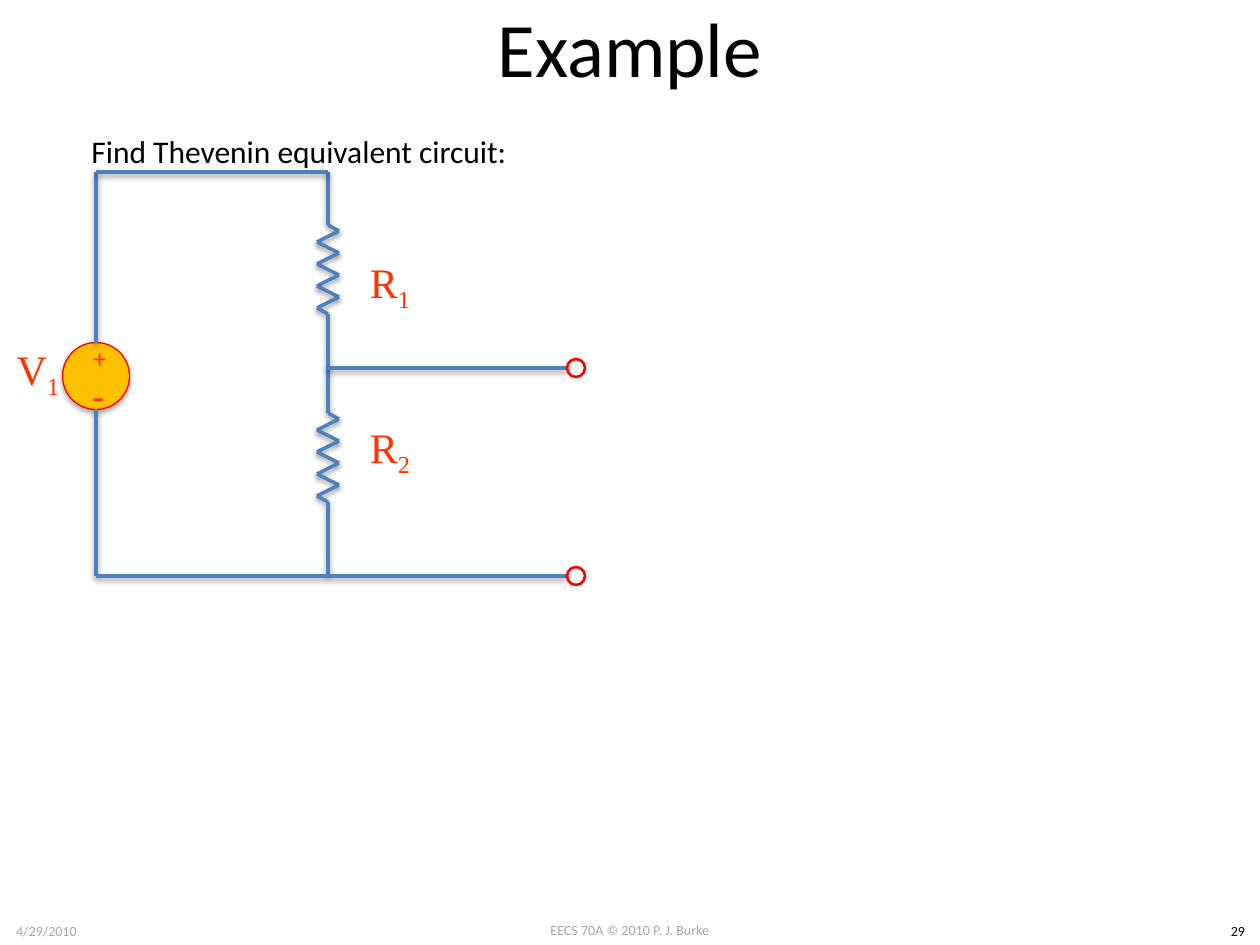
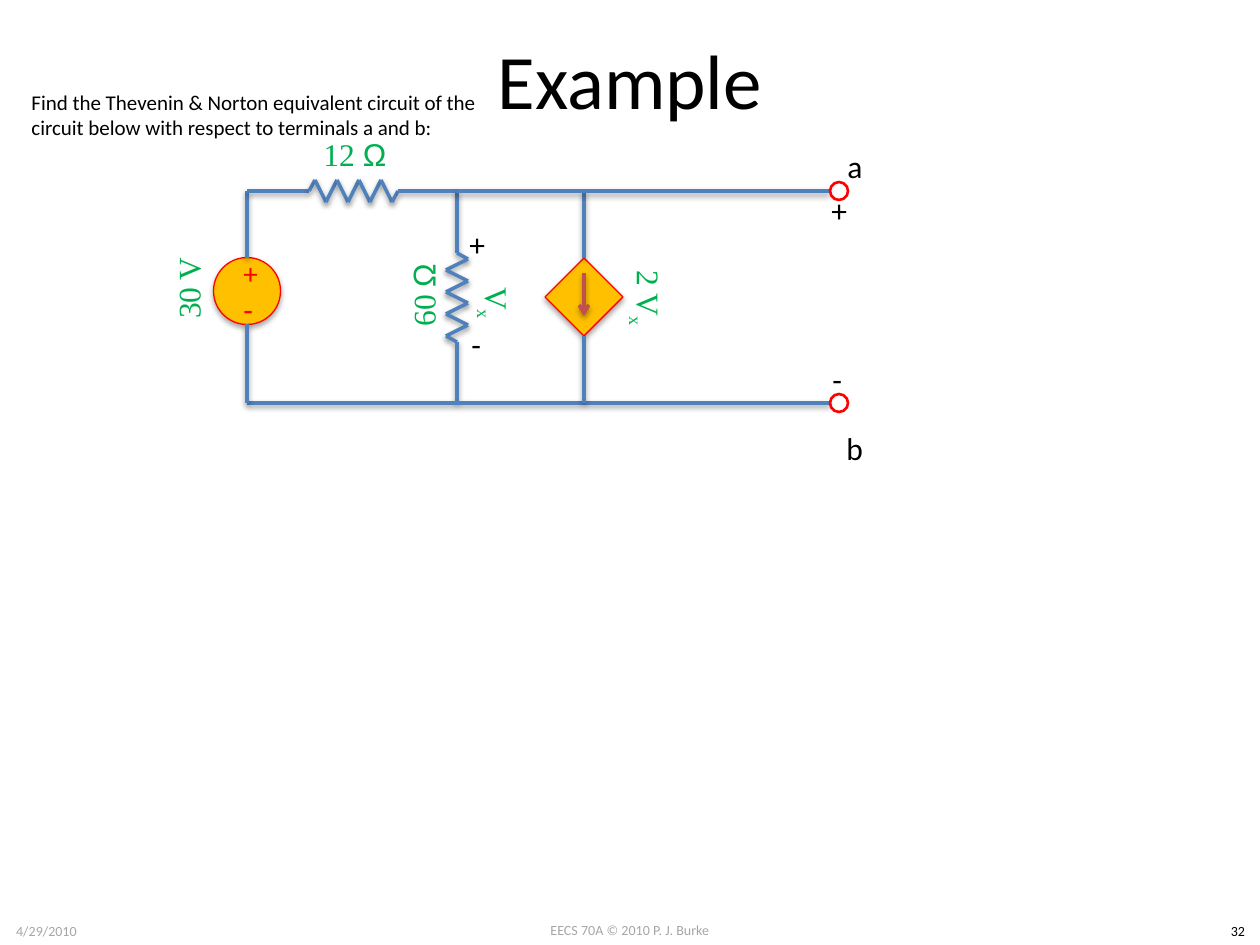
from dataclasses import dataclass
from itertools import pairwise

from pptx import Presentation
from pptx.dml.color import RGBColor
from pptx.enum.shapes import MSO_CONNECTOR as Link, MSO_SHAPE as Shape
from pptx.enum.text import MSO_ANCHOR as Anchor, MSO_AUTO_SIZE as Fit, PP_ALIGN as Align
from pptx.oxml import parse_xml
from pptx.oxml.ns import nsdecls
from pptx.util import Pt

PX = 914400 / 126


@dataclass(frozen=True)
class Theme:
    ink: str = "000000"
    muted: str = "A6A6A6"
    wire: str = "4F81BD"
    arrow: str = "C0504D"
    source: str = "FFC000"
    outline: str = "FF0000"
    symbol: str = "FF3300"
    value: str = "00B050"
    sans: str = "Calibri"
    serif: str = "Times New Roman"
    greek: str = "Arial"
    title_size: float = 44
    symbol_size: float = 24
    body_size: float = 18
    small_size: float = 12
    footer_size: float = 8
    wire_width: float = 2
    source_width: float = 0.75
    terminal_width: float = 1.5


@dataclass(frozen=True)
class Box:
    left: int
    top: int
    width: int
    height: int


THEME = Theme()
PAGE = Box(0, 0, 1260, 945)
ZIGZAG = [(0, 0), *((11 * (-1) ** i, 6 + 11 * i) for i in range(8)), (0, 89)]


def emu(*lengths):
    return [round(length * PX) for length in lengths]


def color(code):
    return RGBColor.from_string(code)


def run(text, size=THEME.body_size, font=THEME.sans, ink=THEME.ink, sub=False, bold=False):
    return dict(text=text, size=size, font=font, ink=ink, sub=sub, bold=bold)


def symbol(letter, index, size=THEME.symbol_size, ink=THEME.symbol):
    return [run(letter, size, THEME.serif, ink), run(index, size, THEME.serif, ink, sub=True)]


def value(number, font=THEME.serif):
    return run(number, font=font, ink=THEME.value)


def write(slide, box, runs, align=Align.LEFT, anchor=Anchor.TOP, wrap=True, turn=0):
    note = slide.shapes.add_textbox(*emu(box.left, box.top, box.width, box.height))
    note.rotation = turn
    frame = note.text_frame
    frame.word_wrap = wrap
    frame.auto_size = Fit.NONE if wrap else Fit.SHAPE_TO_FIT_TEXT
    frame.vertical_anchor = anchor
    paragraph = frame.paragraphs[0]
    paragraph.alignment = align
    for part in runs:
        piece = paragraph.add_run()
        piece.text = part["text"]
        piece.font.size = Pt(part["size"])
        piece.font.name = part["font"]
        piece.font.bold = part["bold"]
        piece.font.color.rgb = color(part["ink"])
        if part["sub"]:
            piece.font._element.set("baseline", "-25000")


def label(slide, x, y, runs, turn=0, width=150, height=92):
    box = Box(x - width // 2, y - height // 2, width, height)
    write(slide, box, runs, Align.CENTER, Anchor.MIDDLE, turn=turn)


def cast_shadow(shape, distance, alpha):
    shape.element.spPr.append(parse_xml(
        f'<a:effectLst {nsdecls("a")}><a:outerShdw blurRad="40000" dist="{distance}" '
        f'dir="5400000" rotWithShape="0"><a:srgbClr val="000000"><a:alpha val="{alpha}"/>'
        '</a:srgbClr></a:outerShdw></a:effectLst>'))


def wire(slide, start, end, ink=THEME.wire, arrow=False):
    line = slide.shapes.add_connector(Link.STRAIGHT, *emu(*start, *end))
    line.line.color.rgb = color(ink)
    line.line.width = Pt(THEME.wire_width)
    if arrow:
        line.line._get_or_add_ln().append(parse_xml(f'<a:tailEnd {nsdecls("a")} type="arrow"/>'))
    cast_shadow(line, 20000, 38000)
    return line


def wires(slide, points):
    for start, end in pairwise(points):
        wire(slide, start, end)


def resistor(slide, x, y, lead_in, lead_out, vertical=True):
    if vertical:
        bends = [(x + across, y + along) for across, along in ZIGZAG]
        ends = (x, lead_in), (x, lead_out)
    else:
        bends = [(x + along, y - across) for across, along in ZIGZAG]
        ends = (lead_in, y), (lead_out, y)
    wires(slide, [ends[0], *bends, ends[1]])


def source_body(slide, kind, x, y, size):
    body = slide.shapes.add_shape(kind, *emu(x - size / 2, y - size / 2, size, size))
    body.fill.solid()
    body.fill.fore_color.rgb = color(THEME.source)
    body.line.color.rgb = color(THEME.outline)
    body.line.width = Pt(THEME.source_width)
    cast_shadow(body, 23000, 35000)
    return body


def voltage_source(slide, x, y, top, bottom, plus, minus):
    source_body(slide, Shape.OVAL, x, y, 67)
    for sign, offset in ((plus, -18), (minus, 18)):
        label(slide, x, y + offset, [sign], width=33, height=42)
    wire(slide, (x, y - 33), (x, top))
    wire(slide, (x, y + 33), (x, bottom))


def dependent_source(slide, x, y, top, bottom):
    diamond = source_body(slide, Shape.DIAMOND, x, y, 78)
    for rail, side in ((top, 0), (bottom, 2)):
        wire(slide, (x, rail), (x, y)).end_connect(diamond, side)
    wire(slide, (x, y - 24), (x, y + 19), THEME.arrow, arrow=True)


def terminal(slide, x, y):
    ring = slide.shapes.add_shape(Shape.OVAL, *emu(x, y - 9, 18, 18))
    ring.shadow.inherit = False
    ring.fill.background()
    ring.line.color.rgb = color(THEME.outline)
    ring.line.width = Pt(THEME.terminal_width)


def divider_circuit(slide, box):
    left, top = box.left, box.top
    right, bottom = left + box.width, top + box.height
    branch, tap = left + 232, top + 196
    resistor(slide, branch, top + 53, top, tap)
    resistor(slide, branch, top + 241, tap, bottom)
    voltage_source(slide, left, top + 204, top, bottom,
                   run("+", 14.8, THEME.serif, THEME.symbol, bold=True),
                   run("-", 20, THEME.serif, THEME.symbol))
    wire(slide, (branch, top), (left, top))
    wire(slide, (right, bottom), (left, bottom))
    wire(slide, (right, tap), (branch, tap))
    for y in (tap, bottom):
        terminal(slide, right, y)
    label(slide, left + 294, top + 113, symbol("R", "1"))
    label(slide, left + 294, top + 278, symbol("R", "2"))
    label(slide, left - 58, top + 200, symbol("V", "1"), width=76)


def dependent_circuit(slide, box):
    left, top = box.left, box.top
    right, bottom = left + box.width, top + box.height
    shunt, controlled = left + 210, left + 337
    resistor(slide, shunt, top + 62, top, bottom)
    wire(slide, (left, bottom), (right, bottom))
    dependent_source(slide, controlled, top + box.height // 2, top, bottom)
    voltage_source(slide, left, top + 100, top, bottom,
                   run("+", 16.6, ink=THEME.outline), run("-", ink=THEME.outline))
    resistor(slide, left + 62, top, left, shunt, vertical=False)
    wire(slide, (shunt, top), (right, top))
    for y in (top, bottom):
        terminal(slide, right + 1, y)
    ohm = value("Ω", THEME.greek)
    labels = [
        (176, 104, [value("60 "), ohm], 270),
        (-59, 97, [value("30 V")], 270),
        (108, -37, [value("12 "), ohm], 0),
        (400, 107, symbol("2 V", "x", THEME.body_size, THEME.value), 90),
        (248, 112, symbol("V", "x", THEME.body_size, THEME.value), 90),
    ]
    for x, y, runs, turn in labels:
        label(slide, left + x, top + y, runs, turn)
    marks = [("a", 588, -50, 40), ("b", 587, 232, 43), ("+", 572, -6, 42),
             ("-", 573, 163, 35), ("+", 210, 28, 42), ("-", 212, 128, 35)]
    for mark, x, y, width in marks:
        write(slide, Box(left + x, top + y, width, 50), [run(mark)], wrap=False)


def footer(slide, box, number):
    parts = [("EECS 70A © 2010 P. J. Burke", 483, 0, 294, THEME.muted),
             ("4/29/2010", 0, 1, 93, THEME.muted),
             (number, 1216, 1, 44, THEME.ink)]
    for text, x, y, width, ink in parts:
        write(slide, Box(box.left + x, box.top + y, width, box.height),
              [run(text, THEME.footer_size, ink=ink)], Align.CENTER)


def example_slide(deck, number, title_height):
    slide = deck.slides.add_slide(deck.slide_layouts[6])
    footer(slide, Box(0, 915, PAGE.width, 30), number)
    write(slide, Box(63, 0, 1134, title_height), [run("Example", THEME.title_size)],
          Align.CENTER, Anchor.MIDDLE)
    return slide


def main():
    deck = Presentation()
    deck.slide_width, deck.slide_height = emu(PAGE.width, PAGE.height)

    divider = example_slide(deck, "29", 94)
    divider_circuit(divider, Box(96, 172, 471, 404))
    write(divider, Box(79, 126, 446, 50), [run("Find Thevenin equivalent circuit:")], wrap=False)

    dependent = example_slide(deck, "32", 157)
    dependent_circuit(dependent, Box(247, 191, 582, 212))
    write(dependent, Box(19, 83, 522, 63), [run(
        "Find the Thevenin & Norton equivalent circuit of the circuit below "
        "with respect to terminals a and b:", THEME.small_size)])

    deck.save("out.pptx")


if __name__ == "__main__":
    main()
